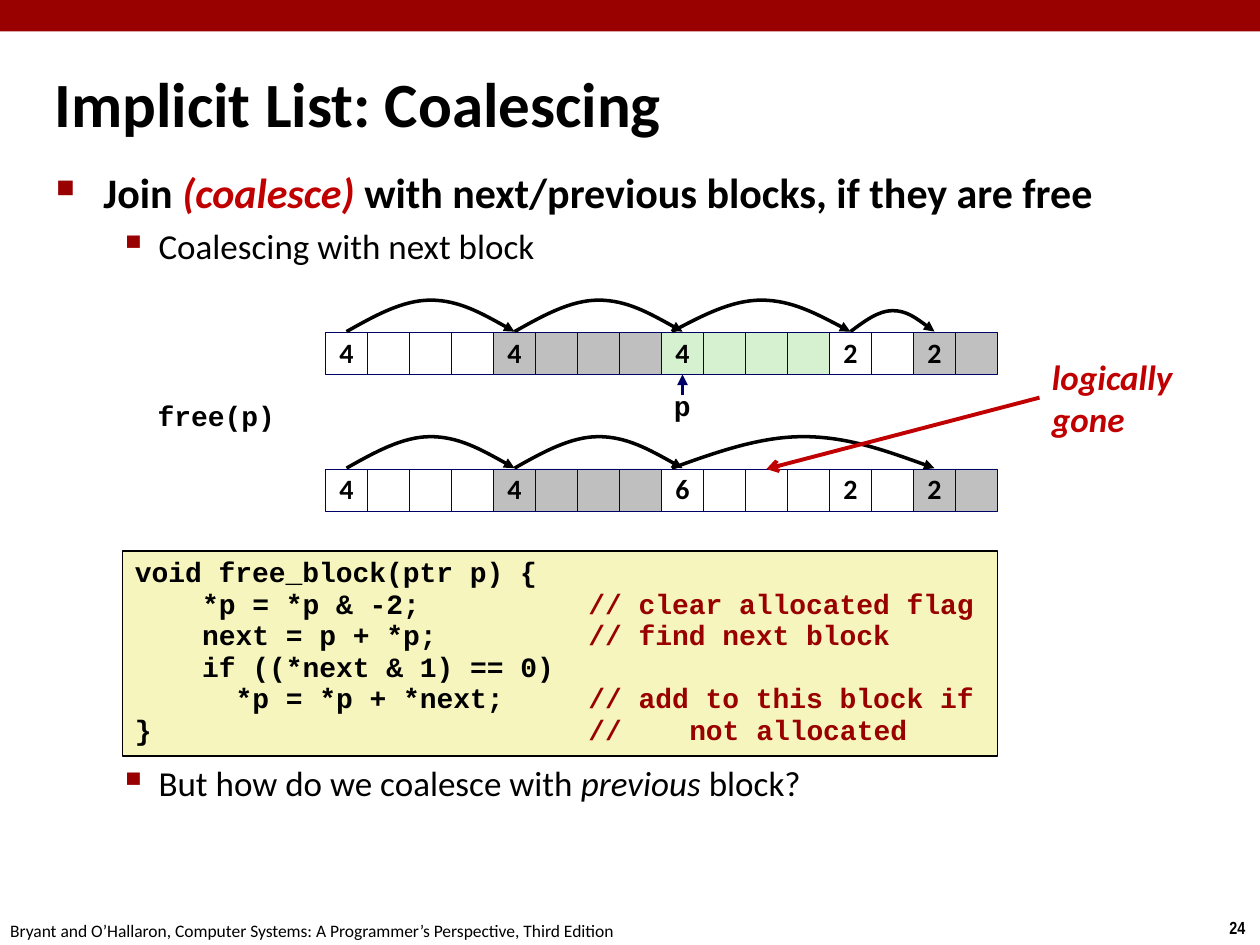
"""Build the slide on coalescing blocks in an implicit free list."""
from lxml.etree import SubElement
from pptx import Presentation
from pptx.dml.color import RGBColor
from pptx.enum.shapes import MSO_CONNECTOR, MSO_SHAPE
from pptx.enum.text import MSO_ANCHOR, PP_ALIGN
from pptx.oxml.ns import qn
from pptx.util import Pt

BLACK = RGBColor(0x00, 0x00, 0x00)
WHITE = RGBColor(0xFF, 0xFF, 0xFF)
DARK_RED = RGBColor(0x99, 0x00, 0x00)
RED = RGBColor(0xC0, 0x00, 0x00)
NAVY = RGBColor(0x00, 0x00, 0x66)
GRAY = RGBColor(0xBF, 0xBF, 0xBF)
SILVER = RGBColor(0xC0, 0xC0, 0xC0)
GREEN = RGBColor(0xD5, 0xF1, 0xCF)
CREAM = RGBColor(0xF6, 0xF5, 0xBD)

CELL = 24
ROW_LEFT = 186
CHAR = 9.6
COMMENT_COLUMN = 27


class Deck:
    """Holds the style and the current slide."""

    font = "Calibri"
    mono = "Courier New"

    def __init__(self, prs):
        self.s = prs.slides.add_slide(prs.slide_layouts[5])

    def style(self, p, size, color=BLACK, font=None, bold=True, italic=False):
        for r in p.runs:
            f = r.font
            f.name, f.size, f.bold, f.italic = font or self.font, Pt(size), bold, italic
            f.color.rgb = color

    def title(self, x, y, w, h, text):
        sp = self.s.shapes.title
        sp.left, sp.top, sp.width, sp.height = Pt(x), Pt(y), Pt(w), Pt(h)
        tf = sp.text_frame
        tf.text = text
        tf.vertical_anchor = MSO_ANCHOR.MIDDLE
        p = tf.paragraphs[0]
        p.alignment = PP_ALIGN.LEFT
        self.style(p, 36)

    def text(self, x, y, w, h, text, size, spacing=None, **look):
        sp = self.s.shapes.add_textbox(Pt(x), Pt(y), Pt(w), Pt(h))
        tf = sp.text_frame
        tf.word_wrap = False
        tf.text = text
        for p in tf.paragraphs:
            p.line_spacing = spacing
            self.style(p, size, **look)
        return sp

    def rect(self, x, y, w, h, fill, line=None, width=0.25):
        sp = self.s.shapes.add_shape(MSO_SHAPE.RECTANGLE, Pt(x), Pt(y), Pt(w), Pt(h))
        sp.shadow.inherit = False
        sp.fill.solid()
        sp.fill.fore_color.rgb = fill
        if line is None:
            sp.line.fill.background()
        else:
            sp.line.color.rgb = line
            sp.line.width = Pt(width)
        return sp

    def heap(self, y, blocks):
        cells = []
        for size, fill, label in blocks:
            for i in range(size):
                sp = self.rect(ROW_LEFT + len(cells) * CELL, y, CELL, CELL, fill, NAVY)
                cells.append(sp)
                if i == 0:
                    tf = sp.text_frame
                    tf.word_wrap = False
                    tf.vertical_anchor = MSO_ANCHOR.MIDDLE
                    tf.text = label
                    p = tf.paragraphs[0]
                    p.alignment = PP_ALIGN.CENTER
                    p.line_spacing = 0.98
                    self.style(p, 16)
        return cells

    def arrowhead(self, line, color, width, kind):
        line.color.rgb = color
        line.width = Pt(width)
        SubElement(line._get_or_add_ln(), qn("a:tailEnd"), type=kind)

    def arc(self, x1, x2, y, height):
        rises = (0, 0.5, 1, 1, 1, 0.5, 0)
        points = [(Pt(x1 + (x2 - x1) * i / 6), Pt(y - height * rise))
                  for i, rise in enumerate(rises)]
        builder = self.s.shapes.build_freeform(*points[0])
        builder.add_line_segments(points[1:], close=False)
        sp = builder.convert_to_shape()
        sp.shadow.inherit = False
        sp.fill.background()
        outline = next(sp._element.iter(qn("a:path")))
        lines = outline.findall(qn("a:lnTo"))
        for i in range(0, len(lines), 3):
            curve = SubElement(outline, qn("a:cubicBezTo"))
            for ln in lines[i:i + 3]:
                curve.append(ln[0])
                outline.remove(ln)
        self.arrowhead(sp.line, BLACK, 2, "triangle")

    def arrow(self, start, end, color, width, kind, begin=None):
        x, y = start
        c = self.s.shapes.add_connector(MSO_CONNECTOR.STRAIGHT, Pt(x), Pt(y), Pt(x), Pt(y))
        if begin:
            c.begin_connect(*begin)
        c.end_connect(*end)
        self.arrowhead(c.line, color, width, kind)
        SubElement(c._element.spPr, qn("a:effectLst"))

    def bullets(self, x, y, w, h, items):
        tf = self.s.shapes.add_textbox(Pt(x), Pt(y), Pt(w), Pt(h)).text_frame
        tf.word_wrap = True
        for i, (level, before, parts) in enumerate(items):
            p = tf.add_paragraph() if i else tf.paragraphs[0]
            size, left, hang, spacing, mark, scale = (
                (20, 58.5, 22.5, 0.88, "▪", 110) if level else (24, 27, 27, 0.83, "■", 60))
            p.level = level
            p.line_spacing = spacing
            p.space_before = Pt(before)
            for text, color, italic in parts:
                r = p.add_run()
                r.text = text
                r.font.italic = italic
                r.font.name, r.font.size, r.font.bold = self.font, Pt(size), level == 0
                r.font.color.rgb = color
            pPr = p._p.get_or_add_pPr()
            pPr.set("marL", str(Pt(left)))
            pPr.set("indent", str(-Pt(hang)))
            SubElement(SubElement(pPr, qn("a:buClr")), qn("a:srgbClr"), val=str(DARK_RED))
            SubElement(pPr, qn("a:buSzPct"), val=str(scale * 1000))
            SubElement(pPr, qn("a:buChar"), char=mark)

    def code(self, x, y, w, h, lines):
        tf = self.rect(x, y, w, h, CREAM, BLACK, 1).text_frame
        tf.word_wrap = False
        tf.vertical_anchor = MSO_ANCHOR.TOP
        for i, (indent, code, comment) in enumerate(lines):
            p = tf.add_paragraph() if i else tf.paragraphs[0]
            p.alignment = PP_ALIGN.LEFT
            p.line_spacing = 0.94
            p.text = "\t" + code if indent else code
            self.style(p, 16, font=self.mono)
            if comment:
                r = p.add_run()
                r.text = "\t" + comment
                f = r.font
                f.name, f.size, f.bold = self.mono, Pt(16), True
                f.color.rgb = DARK_RED
            tabs = SubElement(p._p.get_or_add_pPr(), qn("a:tabLst"))
            for column in filter(None, (indent, COMMENT_COLUMN, COMMENT_COLUMN + 6)):
                SubElement(tabs, qn("a:tab"), pos=str(Pt(column * CHAR)), algn="l")


def main():
    prs = Presentation()
    prs.slide_width, prs.slide_height = Pt(720), Pt(540)
    d = Deck(prs)
    d.rect(0, 0, 720, 18, DARK_RED)
    d.text(695.5, 520.5, 24.5, 19.5, "24", 10, font="Arial Narrow")
    credit = d.text(0, 522, 364, 18, "Bryant and O’Hallaron, Computer Systems: "
                    "A Programmer’s Perspective, Third Edition", 10, bold=False)
    credit.text_frame.margin_left = Pt(5.8)
    d.title(24, 36, 533, 45, "Implicit List: Coalescing")
    d.bullets(25, 96.5, 654.5, 432, [
        (0, 0, [("Join ", BLACK, False), ("(coalesce) ", RED, True),
                ("with next/previous blocks, if they are free", BLACK, False)]),
        (1, 7.5, [("Coalescing with next block", BLACK, False)]),
        (1, 286, [("But how do we coalesce with ", BLACK, False),
                  ("previous", BLACK, True), (" block?", BLACK, False)]),
    ])
    d.code(70, 315, 500, 117, [
        (0, "void free_block(ptr p) {", ""),
        (4, "*p = *p & -2;", "// clear allocated flag"),
        (4, "next = p + *p;", "// find next block"),
        (4, "if ((*next & 1) == 0)", ""),
        (6, "*p = *p + *next;", "// add to this block if"),
        (0, "}", "//\tnot allocated"),
    ])

    ends = [(4, WHITE, "4"), (4, GRAY, "4")], [(2, WHITE, "2"), (2, SILVER, "2")]
    before = d.heap(190, ends[0] + [(4, GREEN, "4")] + ends[1])
    after = d.heap(268, ends[0] + [(4, WHITE, "6")] + ends[1])
    for y in (189.5, 267.5):
        d.arc(198, 294, y, 18)
        d.arc(294, 390, y, 18)
    d.arc(384, 486, 189.5, 18)
    d.arc(486, 534, 189.5, 12)
    d.arc(384, 534, 267.5, 18)

    d.text(83, 226, 82, 26, "free(p)", 16, 0.94, font=d.mono)
    d.text(378, 220, 24, 26, "p", 16, 0.94, font=d.mono)
    d.arrow((390, 226), (before[8], 2), NAVY, 2, "triangle")
    gone = d.text(594, 199.5, 83.5, 55.5, "logically\ngone", 20, color=RED, italic=True)
    d.arrow((594, 227), (after[10], 0), RED, 2.25, "arrow", begin=(gone, 1))
    prs.save("out.pptx")


if __name__ == "__main__":
    main()
